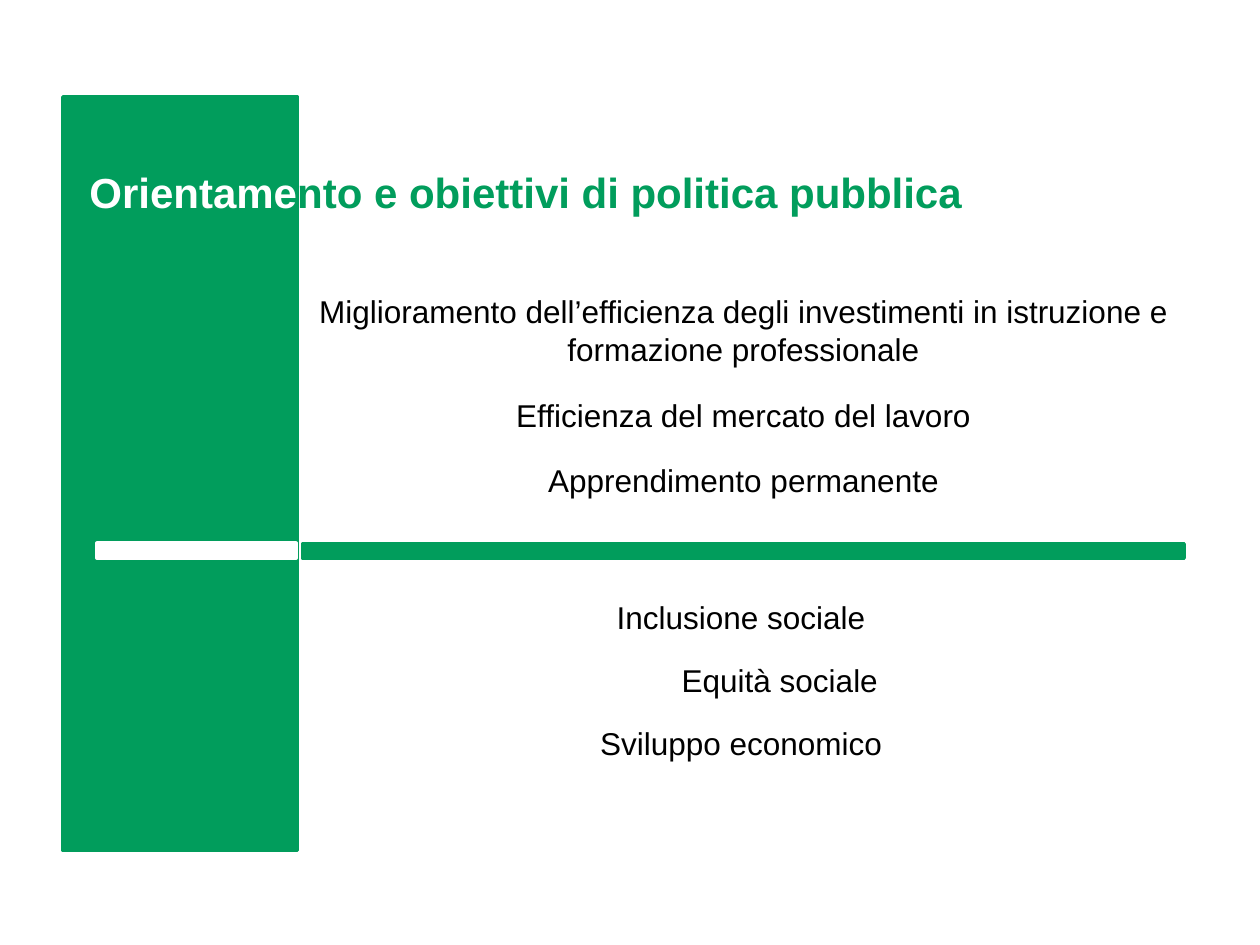
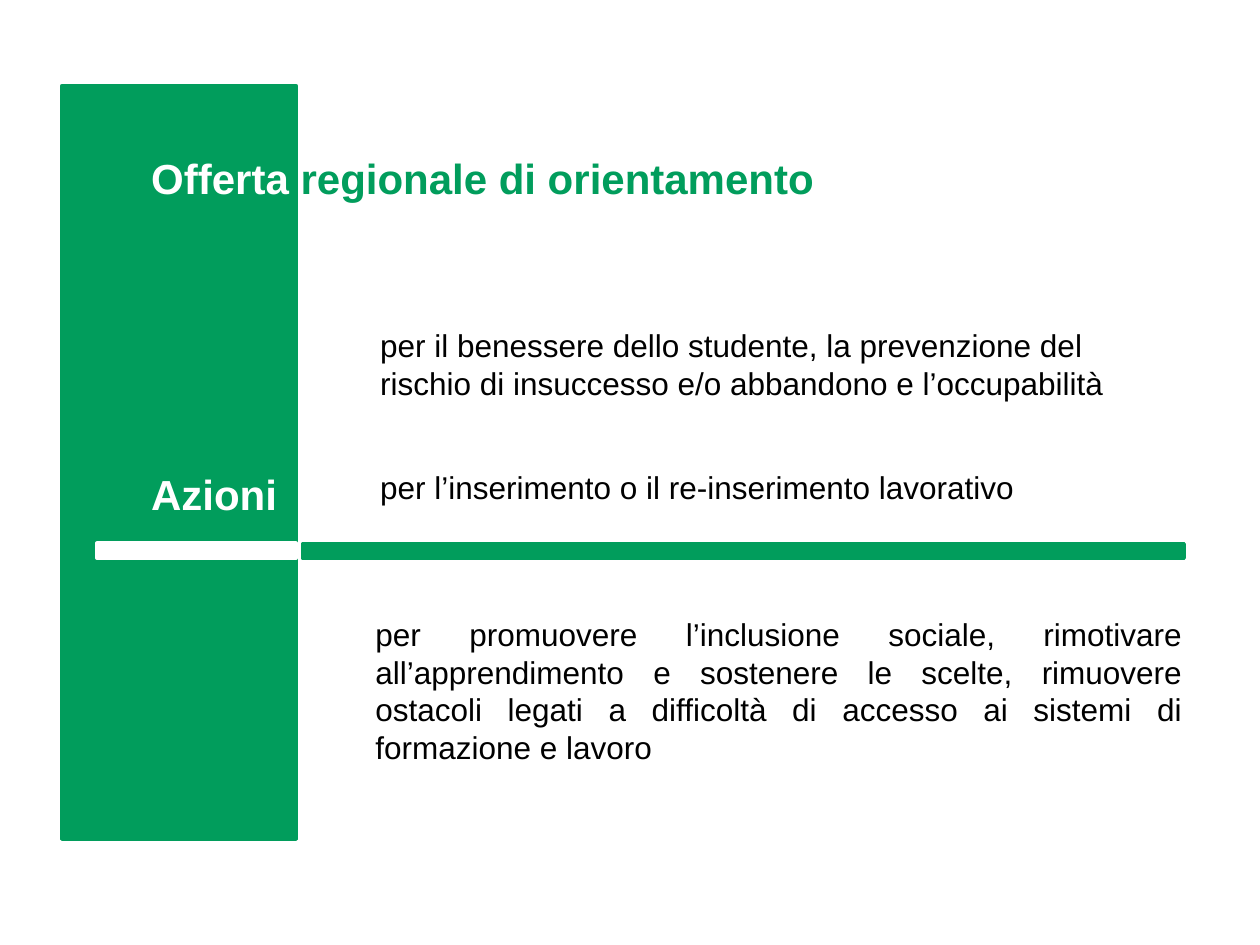
"""Build two slides on public policy aims and regional guidance services."""
from pptx import Presentation
from pptx.dml.color import RGBColor
from pptx.enum.shapes import MSO_SHAPE as Shape
from pptx.enum.text import MSO_ANCHOR as Anchor, MSO_AUTO_SIZE as AutoSize, PP_ALIGN as Align
from pptx.util import Pt

COLORS = {"green": "019D5C", "white": "FFFFFF", "black": "000000"}
FONT = "Arial"
TITLE_SIZE = 24
BODY_SIZE = 18
TITLE_HEIGHT = 36
LINE_HEIGHT = 28.8
TITLE_ONLY = 5


def color(name):
    return RGBColor.from_string(COLORS[name])


def place(shape, left, top, width, height):
    shape.left, shape.top = Pt(left), Pt(top)
    shape.width, shape.height = Pt(width), Pt(height)


def add_bar(slide, color_name, left, top, width, height):
    bar = slide.shapes.add_shape(Shape.RECTANGLE, Pt(left), Pt(top), Pt(width), Pt(height))
    bar.shadow.inherit = False
    bar.fill.solid()
    bar.fill.fore_color.rgb = color(color_name)
    bar.line.color.rgb = color(color_name)
    bar.line.width = Pt(2)


def write(shape, runs, size, bold=False, align=Align.LEFT):
    frame = shape.text_frame
    frame.word_wrap = True
    frame.auto_size = AutoSize.NONE
    frame.vertical_anchor = Anchor.TOP
    paragraph = frame.paragraphs[0]
    paragraph.alignment = align
    for text, color_name in runs:
        run = paragraph.add_run()
        run.text = text
        run.font.name = FONT
        run.font.size = Pt(size)
        run.font.bold = bold
        run.font.color.rgb = color(color_name)


def add_text(slide, text, left, top, width, height=LINE_HEIGHT, align=Align.CENTER,
             size=BODY_SIZE, color_name="black", bold=False):
    box = slide.shapes.add_textbox(Pt(left), Pt(top), Pt(width), Pt(height))
    write(box, [(text, color_name)], size, bold, align)


def add_banded_slide(presentation, band_left, band_top, title_box, title_on_band, title_rest):
    slide = presentation.slides.add_slide(presentation.slide_layouts[TITLE_ONLY])
    add_bar(slide, "green", band_left, band_top, 134, 430.6)
    add_bar(slide, "white", 55.4, 310.4, 113.8, 8.6)
    add_bar(slide, "green", 172.8, 311, 504, 8)
    title = slide.shapes.title
    place(title, *title_box, TITLE_HEIGHT)
    write(title, [(title_on_band, "white"), (title_rest, "green")], TITLE_SIZE, bold=True)
    title.element.getparent().append(title.element)
    return slide


def build_policy_slide(presentation):
    slide = add_banded_slide(presentation, 36, 55.4, (43.9, 91.4, 642.2),
                             "Orientame", "nto e obiettivi di politica pubblica")
    add_text(slide, "Miglioramento dell’efficienza degli investimenti in istruzione "
                    "e formazione professionale", 171.4, 163.4, 506.9, 51.1)
    aims = [
        ("Efficienza del mercato del lavoro", 171.4, 222.5),
        ("Apprendimento permanente", 171.4, 259.9),
        ("Inclusione sociale", 170, 338.4),
        ("Equità sociale", 192.2, 374.4),
        ("Sviluppo economico", 170, 410.4),
    ]
    for text, left, top in aims:
        add_text(slide, text, left, top, 506.9)


def build_services_slide(presentation):
    slide = add_banded_slide(presentation, 35.3, 49, (79.2, 83.5, 678.2),
                             "Offerta ", "regionale di orientamento")
    add_text(slide, "per il benessere dello studente, la prevenzione del rischio di "
                    "insuccesso e/o abbandono e l’occupabilità",
             210.2, 182.9, 472.3, 51.1, Align.LEFT)
    add_text(slide, "per l’inserimento o il re-inserimento lavorativo",
             210.2, 264.2, 472.3, align=Align.JUSTIFY)
    add_text(slide, "per promuovere l’inclusione sociale, rimotivare all’apprendimento e "
                    "sostenere le scelte, rimuovere ostacoli legati a difficoltà di "
                    "accesso ai sistemi di formazione e lavoro",
             207.4, 347.8, 475.2, 94.3, Align.JUSTIFY)
    add_text(slide, "Azioni", 79.2, 264.2, 97.2, TITLE_HEIGHT, Align.LEFT,
             TITLE_SIZE, "white", True)


def main():
    presentation = Presentation()
    presentation.slide_width = Pt(720)
    presentation.slide_height = Pt(540)
    build_policy_slide(presentation)
    build_services_slide(presentation)
    presentation.save("out.pptx")


if __name__ == "__main__":
    main()
